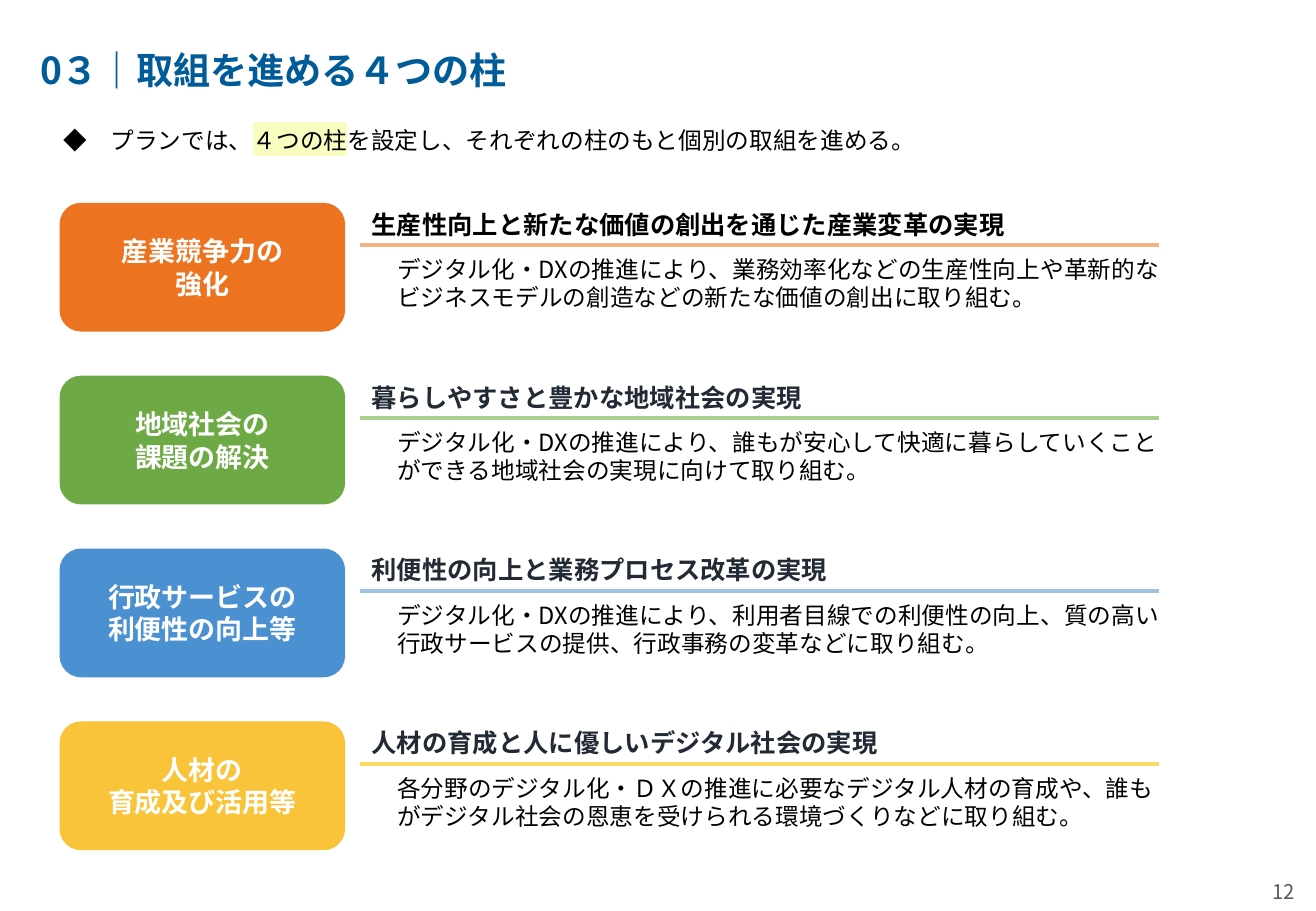
import pptx
import pptx.util
import pptx.dml.color
import pptx.enum.shapes
import pptx.enum.text
import pptx.oxml
import pptx.oxml.ns

FONT = "Noto Sans CJK JP"
TITLE = "0３｜取組を進める４つの柱"
LEAD = [("◆　プランでは、", None), ("４つの柱", "F9FDBF"),
        ("を設定し、それぞれの柱のもと個別の取組を進める。", None)]
PAGE_NUMBER = "12"
PILLARS = [
    {"name": ("産業競争力の", "強化"), "fill": "EC7320", "rule": "F4B183", "heading_color": "000000",
     "heading": "生産性向上と新たな価値の創出を通じた産業変革の実現",
     "detail": "デジタル化・DXの推進により、業務効率化などの生産性向上や革新的な"
               "ビジネスモデルの創造などの新たな価値の創出に取り組む。"},
    {"name": ("地域社会の", "課題の解決"), "fill": "6DA945", "rule": "A9D18E", "heading_color": "222A35",
     "heading": "暮らしやすさと豊かな地域社会の実現",
     "detail": "デジタル化・DXの推進により、誰もが安心して快適に暮らしていくこと"
               "ができる地域社会の実現に向けて取り組む。"},
    {"name": ("行政サービスの", "利便性の向上等"), "fill": "4B91D1", "rule": "9DC3E6", "heading_color": "222A35",
     "heading": "利便性の向上と業務プロセス改革の実現",
     "detail": "デジタル化・DXの推進により、利用者目線での利便性の向上、質の高い"
               "行政サービスの提供、行政事務の変革などに取り組む。"},
    {"name": ("人材の", "育成及び活用等"), "fill": "F9C33A", "rule": "FFD966", "heading_color": "222A35",
     "heading": "人材の育成と人に優しいデジタル社会の実現",
     "detail": "各分野のデジタル化・ＤＸの推進に必要なデジタル人材の育成や、誰も"
               "がデジタル社会の恩恵を受けられる環境づくりなどに取り組む。"},
]

SLIDE_WIDTH, SLIDE_HEIGHT = 10.83, 7.5
FIRST_ROW, LAST_ROW = 1.67, 5.94
ROW_PITCH = (LAST_ROW - FIRST_ROW) / (len(PILLARS) - 1)
BOX_COLUMN, HEADING_COLUMN, DETAIL_COLUMN = 0.49, 2.96, 3.17
BOX_WIDTH, BOX_HEIGHT, TEXT_WIDTH = 2.35, 1.06, 6.58
HEADING_HEIGHT, DETAIL_OFFSET, DETAIL_HEIGHT = 0.35, 0.38, 0.57

ALIGN = pptx.enum.text.PP_ALIGN
ANCHOR = pptx.enum.text.MSO_ANCHOR


def inches(*values):
    return [pptx.util.Inches(value) for value in values]


def color(hex_value):
    return pptx.dml.color.RGBColor.from_string(hex_value)


def assign(target, values):
    for name, value in values.items():
        setattr(target, name, value)


def place(shape, *box):
    assign(shape, dict(zip(("left", "top", "width", "height"), inches(*box))))


def element(tag):
    return pptx.oxml.parse_xml(f"<{tag} {pptx.oxml.ns.nsdecls('a')}/>")


def add_run(paragraph, text, size, hex_value, bold=False, highlight=None):
    run = paragraph.add_run()
    run.text = text
    assign(run.font, {"size": pptx.util.Pt(size), "bold": bold, "name": FONT})
    run.font.color.rgb = color(hex_value)
    latin = run.font._element.find(pptx.oxml.ns.qn("a:latin"))
    east_asian = element("a:ea")
    east_asian.set("typeface", FONT)
    latin.addnext(east_asian)
    if highlight:
        mark = element("a:highlight")
        swatch = element("a:srgbClr")
        swatch.set("val", highlight)
        mark.append(swatch)
        latin.addprevious(mark)


def set_frame(shape, anchor=ANCHOR.TOP, horizontal=0.1, vertical=0.05, **paragraph_format):
    frame = shape.text_frame
    side, edge = inches(horizontal, vertical)
    assign(frame, {"word_wrap": True, "auto_size": pptx.enum.text.MSO_AUTO_SIZE.NONE,
                   "vertical_anchor": anchor, "margin_left": side, "margin_right": side,
                   "margin_top": edge, "margin_bottom": edge})
    paragraph = frame.paragraphs[0]
    assign(paragraph, {"alignment": ALIGN.LEFT, "space_before": pptx.util.Pt(0), **paragraph_format})
    return paragraph


def add_text(slide, box, text, size, hex_value, bold=False, **frame_format):
    shape = slide.shapes.add_textbox(*inches(*box))
    add_run(set_frame(shape, **frame_format), text, size, hex_value, bold)


def add_pillar(slide, top, pillar):
    box = slide.shapes.add_shape(pptx.enum.shapes.MSO_SHAPE.ROUNDED_RECTANGLE,
                                 *inches(BOX_COLUMN, top, BOX_WIDTH, BOX_HEIGHT))
    box.shadow.inherit = False
    box.fill.solid()
    box.fill.fore_color.rgb = color(pillar["fill"])
    box.line.fill.background()
    paragraph = set_frame(box, ANCHOR.MIDDLE, 0.12, 0.08, alignment=ALIGN.CENTER)
    for index, line in enumerate(pillar["name"]):
        if index:
            paragraph.add_line_break()
        add_run(paragraph, line, 16, "FFFFFF", True)

    add_text(slide, (HEADING_COLUMN, top, TEXT_WIDTH, HEADING_HEIGHT),
             pillar["heading"], 15, pillar["heading_color"], True)
    add_text(slide, (DETAIL_COLUMN, top + DETAIL_OFFSET, TEXT_WIDTH, DETAIL_HEIGHT),
             pillar["detail"], 14, "000000")

    rule_top = top + HEADING_HEIGHT
    rule = slide.shapes.add_connector(pptx.enum.shapes.MSO_CONNECTOR.STRAIGHT, *inches(
        HEADING_COLUMN, rule_top, HEADING_COLUMN + TEXT_WIDTH, rule_top))
    rule.line.color.rgb = color(pillar["rule"])
    rule.line.width = pptx.util.Pt(2.25)
    rule._element.spPr.append(element("a:effectLst"))


def main():
    presentation = pptx.Presentation()
    assign(presentation, dict(zip(("slide_width", "slide_height"), inches(SLIDE_WIDTH, SLIDE_HEIGHT))))
    slide = presentation.slides.add_slide(presentation.slide_layouts[1])

    title, lead = slide.placeholders
    place(title, 0.23, 0.41, 10.3, 0.37)
    add_run(set_frame(title, ANCHOR.MIDDLE, line_spacing=0.9), TITLE, 22, "005B99", True)

    place(lead, 0.42, 0.94, 9.91, 0.34)
    paragraph = set_frame(lead, line_spacing=pptx.util.Pt(20), space_after=pptx.util.Pt(9))
    properties = paragraph._element.get_or_add_pPr()
    properties.set("marL", "0")
    properties.set("indent", "0")
    properties.append(element("a:buNone"))
    for text, highlight in LEAD:
        add_run(paragraph, text, 14, "000000", highlight=highlight)

    for index, pillar in enumerate(PILLARS):
        add_pillar(slide, FIRST_ROW + index * ROW_PITCH, pillar)

    add_text(slide, (10.3, 7.14, 0.53, 0.4), PAGE_NUMBER, 12, "595959",
             anchor=ANCHOR.MIDDLE, alignment=ALIGN.CENTER)
    presentation.save("out.pptx")


if __name__ == "__main__":
    main()
